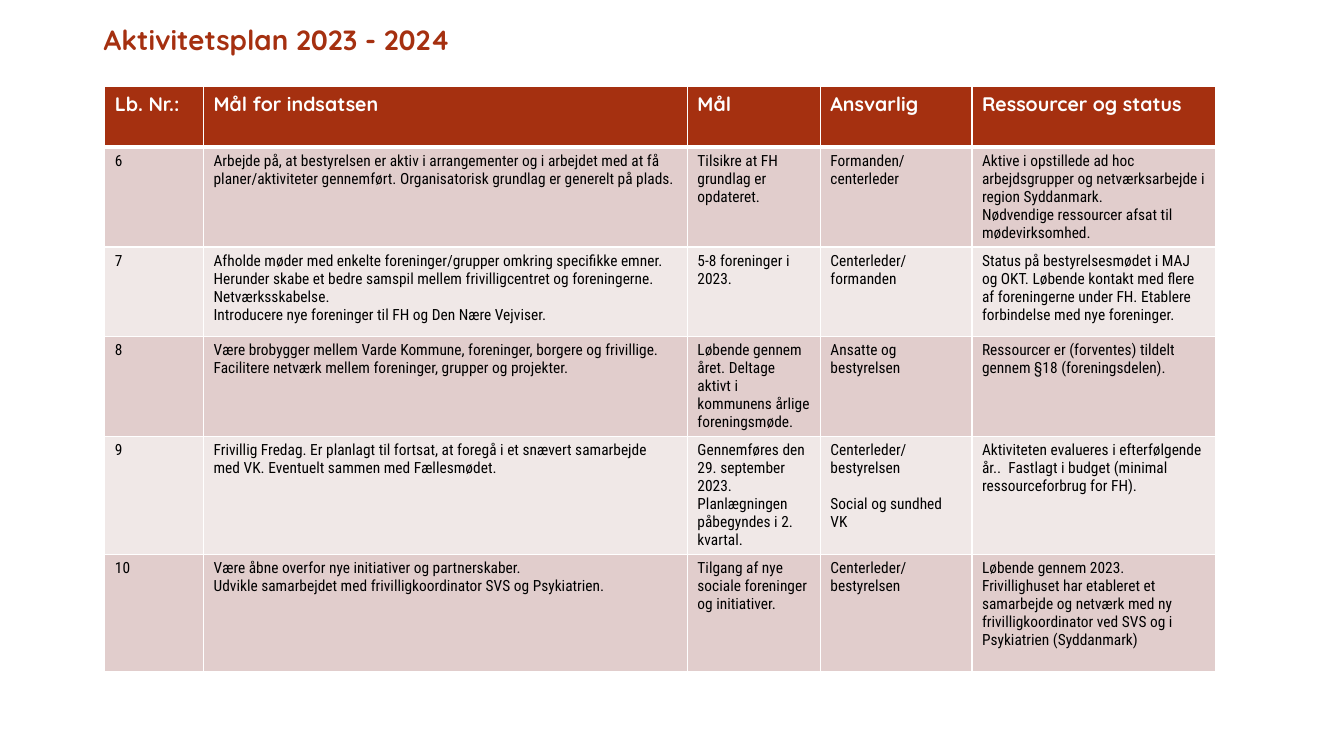
from dataclasses import dataclass

from lxml import etree
from pptx import Presentation
from pptx.dml.color import RGBColor
from pptx.enum.text import MSO_ANCHOR
from pptx.oxml.ns import qn
from pptx.util import Pt

TOP = MSO_ANCHOR.TOP


@dataclass(frozen=True)
class Theme:
    rust: str = "A53010"
    rose: str = "E1CDCC"
    blush: str = "F0E8E7"
    white: str = "FFFFFF"
    black: str = "000000"
    heading_font: str = "Quicksand"
    body_font: str = "Roboto Condensed"
    title_size: float = 19.8
    header_size: float = 14
    body_size: float = 11
    paragraph_gap: float = 12.9
    grid_line: float = 1
    header_line: float = 3


THEME = Theme()
TITLE_STYLE = {"name": THEME.heading_font, "size": Pt(THEME.title_size), "bold": True}
HEADER_STYLE = {"name": THEME.heading_font, "size": Pt(THEME.header_size), "bold": True}
BODY_STYLE = {"name": THEME.body_font, "size": Pt(THEME.body_size), "bold": False}

COLUMN_WIDTHS = [70.5, 345.6, 95, 108.3, 173.7]
ROW_HEIGHTS = [43.2, 71.4, 64, 71.4, 84.3, 83.8]
HEADERS = ["Lb. Nr.:", "Mål for indsatsen", "Mål", "Ansvarlig", "Ressourcer og status"]
ACTIVITIES = [
    [
        "6",
        "Arbejde på, at bestyrelsen er aktiv i arrangementer og i arbejdet med at få "
        "planer/aktiviteter gennemført. Organisatorisk grundlag er generelt på plads.",
        "Tilsikre at FH grundlag er opdateret.",
        "Formanden/centerleder",
        "Aktive i opstillede ad hoc arbejdsgrupper og netværksarbejde i region Syddanmark.\n"
        "Nødvendige ressourcer afsat til mødevirksomhed.",
    ],
    [
        "7",
        "Afholde møder med enkelte foreninger/grupper omkring specifikke emner. "
        "Herunder skabe et bedre samspil mellem frivilligcentret og foreningerne. "
        "Netværksskabelse.\n"
        "Introducere nye foreninger til FH og Den Nære Vejviser.",
        "5-8 foreninger i 2023.",
        "Centerleder/formanden",
        "Status på bestyrelsesmødet i MAJ og OKT. Løbende kontakt med flere af "
        "foreningerne under FH. Etablere forbindelse med nye foreninger.",
    ],
    [
        "8",
        "Være brobygger mellem Varde Kommune, foreninger, borgere og frivillige. "
        "Facilitere netværk mellem foreninger, grupper og projekter.",
        "Løbende gennem året. Deltage aktivt i kommunens årlige foreningsmøde.",
        "Ansatte og bestyrelsen",
        "Ressourcer er (forventes) tildelt gennem §18 (foreningsdelen).",
    ],
    [
        "9",
        "Frivillig Fredag. Er planlagt til fortsat, at foregå i et snævert samarbejde "
        "med VK. Eventuelt sammen med Fællesmødet.",
        "Gennemføres den 29. september 2023.\nPlanlægningen påbegyndes i 2. kvartal.",
        "Centerleder/bestyrelsen\nSocial og sundhed VK",
        "Aktiviteten evalueres i efterfølgende år..  Fastlagt i budget "
        "(minimal ressourceforbrug for FH).",
    ],
    [
        "10",
        "Være åbne overfor nye initiativer og partnerskaber.\n"
        "Udvikle samarbejdet med frivilligkoordinator SVS og Psykiatrien.",
        "Tilgang af nye sociale foreninger og initiativer.",
        "Centerleder/bestyrelsen",
        "Løbende gennem 2023. Frivillighuset har etableret et samarbejde og netværk "
        "med ny frivilligkoordinator ved SVS og i Psykiatrien (Syddanmark)",
    ],
]
SPACED_CELL = (4, 3)


def set_attributes(target, values):
    for name, value in values.items():
        setattr(target, name, value)


def write_text(frame, text, style, color):
    frame.text = text
    for para in frame.paragraphs:
        for span in para.runs:
            set_attributes(span.font, style)
            span.font.color.rgb = RGBColor.from_string(color)


def add_title(page, text):
    box = page.shapes.add_textbox(Pt(67), Pt(8), Pt(702), Pt(70.5))
    frame = box.text_frame
    set_attributes(frame, {"word_wrap": True, "vertical_anchor": TOP, "margin_top": Pt(8.3)})
    write_text(frame, text, TITLE_STYLE, THEME.rust)


def set_borders(cell, widths):
    properties = cell._tc.get_or_add_tcPr()
    for side, width in widths.items():
        line = etree.SubElement(properties, qn(f"a:ln{side}"), w=str(Pt(width)))
        fill = etree.SubElement(line, qn("a:solidFill"))
        etree.SubElement(fill, qn("a:srgbClr"), val=THEME.white)


def format_cell(cell, text, row):
    is_header = row == 0
    widths = dict.fromkeys("LRTB", THEME.grid_line)
    if is_header:
        widths["B"] = THEME.header_line
    elif row == 1:
        widths["T"] = THEME.header_line
    set_borders(cell, widths)
    cell.margin_bottom = Pt(1)
    background = THEME.rust if is_header else (THEME.blush, THEME.rose)[row % 2]
    cell.fill.solid()
    cell.fill.fore_color.rgb = RGBColor.from_string(background)
    style = HEADER_STYLE if is_header else BODY_STYLE
    write_text(cell.text_frame, text, style, THEME.white if is_header else THEME.black)


def add_plan_table(page):
    rows = [HEADERS, *ACTIVITIES]
    frame = page.shapes.add_table(
        len(rows), len(HEADERS), Pt(74.9), Pt(61.9),
        Pt(sum(COLUMN_WIDTHS)), Pt(sum(ROW_HEIGHTS)),
    )
    table = frame.table
    for column, width in zip(table.columns, COLUMN_WIDTHS):
        column.width = Pt(width)
    for row, height in zip(table.rows, ROW_HEIGHTS):
        row.height = Pt(height)
    for row, texts in enumerate(rows):
        for column, text in enumerate(texts):
            format_cell(table.cell(row, column), text, row)
    spaced = table.cell(*SPACED_CELL).text_frame.paragraphs[-1]
    spaced.space_before = Pt(THEME.paragraph_gap)


def main():
    deck = Presentation()
    set_attributes(deck, {"slide_width": Pt(960), "slide_height": Pt(540)})
    page = deck.slides.add_slide(deck.slide_layouts[6])
    add_title(page, "Aktivitetsplan 2023 - 2024")
    add_plan_table(page)
    deck.save("out.pptx")


if __name__ == "__main__":
    main()
